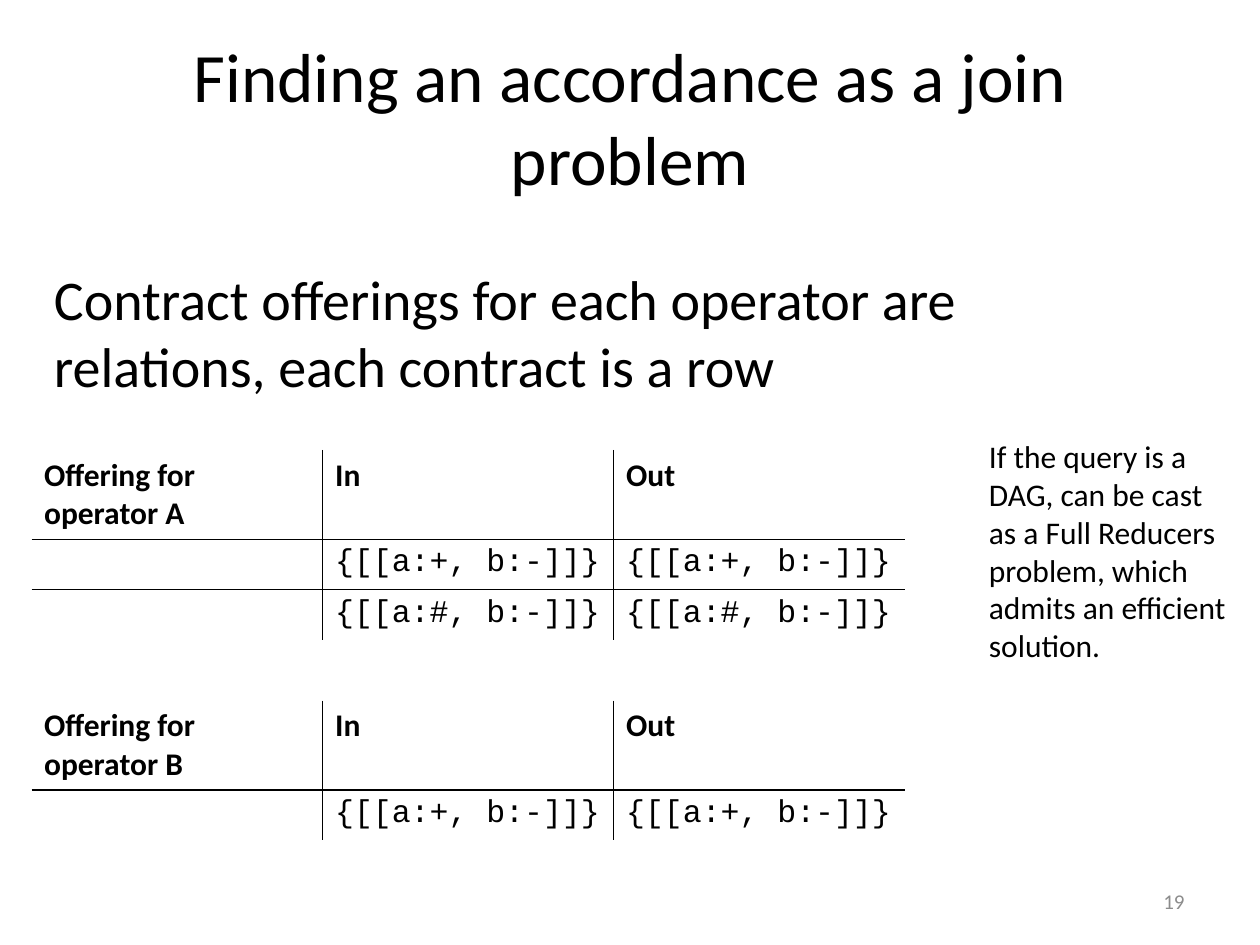
"""Build a slide on finding an accordance as a join problem."""
import pptx
import pptx.dml.color
import pptx.enum.text
import pptx.oxml.ns
import pptx.util
from lxml import etree

Inches = pptx.util.Inches
Pt = pptx.util.Pt
Anchor = pptx.enum.text.MSO_ANCHOR
Align = pptx.enum.text.PP_ALIGN
qn = pptx.oxml.ns.qn

BLACK = pptx.dml.color.RGBColor(0x00, 0x00, 0x00)
GRAY = pptx.dml.color.RGBColor(0x8C, 0x8C, 0x8C)
BODY_FONT = "Calibri"
CODE_FONT = "Courier New"
NO_STYLE_NO_GRID = "{2D5ABB26-0587-4C30-8999-92F81FD0307C}"

TABLE_LEFT = 0.25
COLUMN_WIDTH = 2.31
HEADER_HEIGHT = 0.71
ROW_HEIGHT = 0.4


def format_runs(text_frame, size, font_name=BODY_FONT, color=BLACK, bold=False):
    for paragraph in text_frame.paragraphs:
        for run in paragraph.runs:
            run.font.size = Pt(size)
            run.font.name = font_name
            run.font.color.rgb = color
            run.font.bold = bold


def add_text(slide, box, text, size, color=BLACK, align=Align.LEFT, anchor=Anchor.TOP):
    shape = slide.shapes.add_textbox(*map(Inches, box))
    text_frame = shape.text_frame
    text_frame.word_wrap = True
    text_frame.vertical_anchor = anchor
    text_frame.text = text
    text_frame.paragraphs[0].alignment = align
    format_runs(text_frame, size, color=color)


def add_borders(cell, sides):
    properties = cell._tc.get_or_add_tcPr()
    for side in sides:
        line = etree.SubElement(properties, qn(f"a:ln{side}"), w=str(Pt(1)))
        fill = etree.SubElement(line, qn("a:solidFill"))
        etree.SubElement(fill, qn("a:srgbClr"), val=str(BLACK))


def inner_sides(row, column, row_count, column_count):
    present = {
        "L": column > 0,
        "R": column < column_count - 1,
        "T": row > 0,
        "B": row < row_count - 1,
    }
    return [side for side, is_inner in present.items() if is_inner]


def add_offering_table(slide, top, operator, contracts):
    header = [f"Offering for operator {operator}", "In", "Out"]
    rows = [header] + [["", contract, contract] for contract in contracts]
    row_count, column_count = len(rows), len(header)
    height = HEADER_HEIGHT + ROW_HEIGHT * len(contracts)
    frame = slide.shapes.add_table(
        row_count, column_count, Inches(TABLE_LEFT), Inches(top),
        Inches(COLUMN_WIDTH * column_count), Inches(height))
    table = frame.table
    table.first_row = False
    table.horz_banding = False
    table._tbl.tblPr.find(qn("a:tableStyleId")).text = NO_STYLE_NO_GRID
    for column in table.columns:
        column.width = Inches(COLUMN_WIDTH)
    for row_index, values in enumerate(rows):
        is_header = row_index == 0
        table.rows[row_index].height = Inches(HEADER_HEIGHT if is_header else ROW_HEIGHT)
        for column_index, value in enumerate(values):
            cell = table.cell(row_index, column_index)
            cell.text_frame.text = value
            font_name = BODY_FONT if is_header else CODE_FONT
            format_runs(cell.text_frame, 18, font_name, bold=is_header)
            add_borders(cell, inner_sides(row_index, column_index, row_count, column_count))
            cell.fill.background()


def main():
    presentation = pptx.Presentation()
    presentation.slide_width = Inches(10)
    presentation.slide_height = Inches(7.5)
    slide = presentation.slides.add_slide(presentation.slide_layouts[6])

    add_text(slide, (0.5, 0.3, 9, 1.25), "Finding an accordance as a join problem",
             39.6, align=Align.CENTER, anchor=Anchor.MIDDLE)
    add_text(slide, (0.33, 2.05, 9, 4.95),
             "Contract offerings for each operator are relations, each contract is a row", 32)
    add_offering_table(slide, 3.57, "A", ["{[[a:+, b:-]]}", "{[[a:#, b:-]]}"])
    add_offering_table(slide, 5.56, "B", ["{[[a:+, b:-]]}"])
    add_text(slide, (7.75, 3.42, 2.08, 1.92),
             "If the query is a DAG, can be cast as a Full Reducers problem, "
             "which admits an efficient solution.", 18)
    add_text(slide, (7.17, 6.95, 2.33, 0.4), "19", 12, GRAY, Align.RIGHT, Anchor.MIDDLE)

    presentation.save("out.pptx")


if __name__ == "__main__":
    main()
